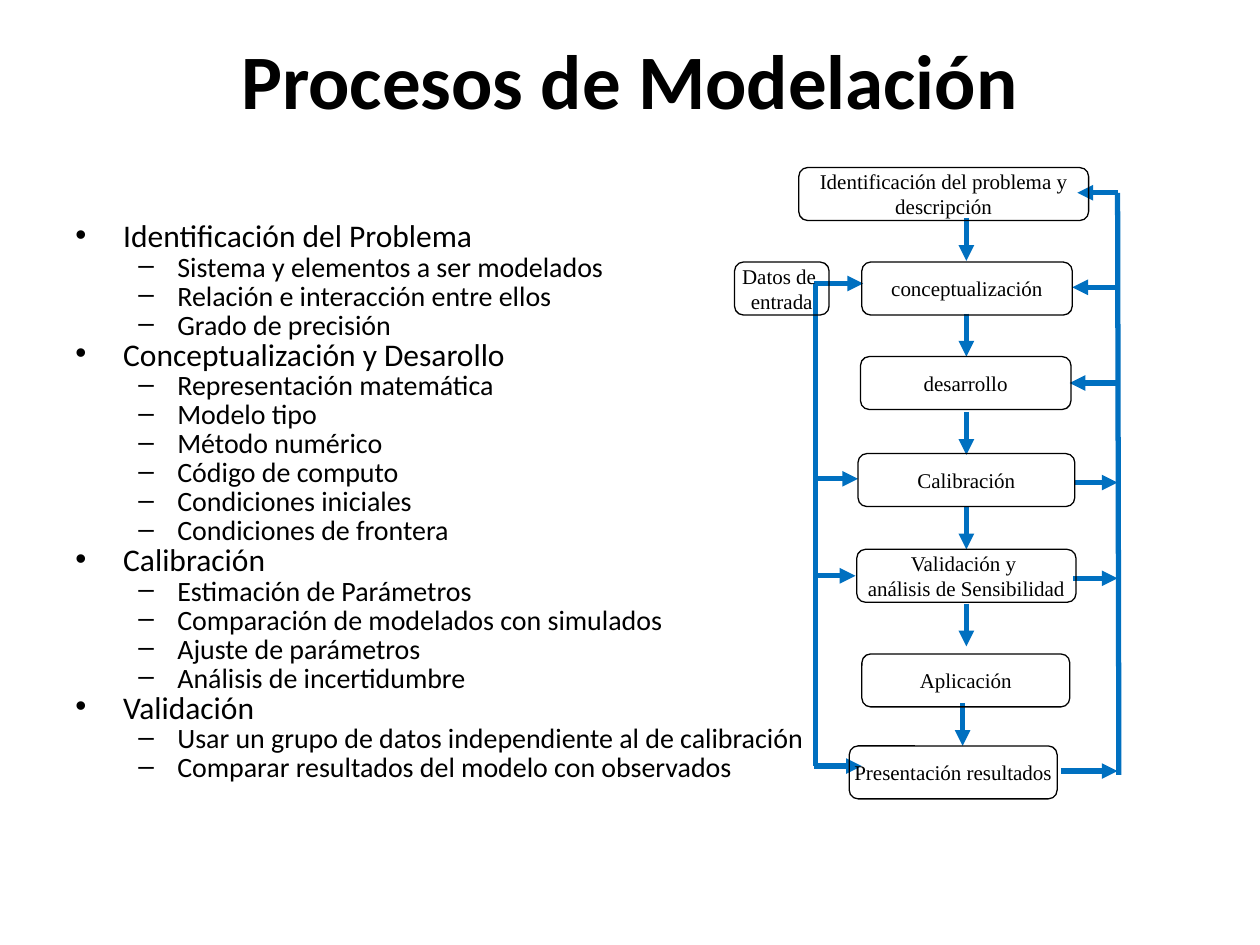
import pptx
import pptx.util
import pptx.dml.color
import pptx.enum.shapes
import pptx.enum.text
import pptx.oxml.ns
from lxml import etree

Inch = pptx.util.Inches
Pt = pptx.util.Pt
RGB = pptx.dml.color.RGBColor
Align = pptx.enum.text.PP_ALIGN
Anchor = pptx.enum.text.MSO_ANCHOR
qn = pptx.oxml.ns.qn

BLACK = RGB(0x00, 0x00, 0x00)
BLUE = RGB(0x00, 0x70, 0xC0)
SANS, SERIF = "Calibri", "Times New Roman"
WIDE, HIGH = 10, 7.5

TITLE = "Procesos de Modelación"
TOPICS = [
    ("Identificación del Problema", [
        "Sistema y elementos a ser modelados",
        "Relación e interacción entre ellos",
        "Grado de precisión"]),
    ("Conceptualización y Desarollo", [
        "Representación matemática",
        "Modelo tipo",
        "Método numérico",
        "Código de computo",
        "Condiciones iniciales",
        "Condiciones de frontera"]),
    ("Calibración", [
        "Estimación de Parámetros",
        "Comparación de modelados con simulados",
        "Ajuste de parámetros",
        "Análisis de incertidumbre"]),
    ("Validación", [
        "Usar un grupo de datos independiente al de calibración",
        "Comparar resultados del modelo con observados"]),
]
# bullet, text size, left margin, hanging indent
LEVELS = [("•", 18, 0.38, 0.38), ("–", 16, 0.81, 0.31)]

# left, top, width, lines of text
BOX_H = 0.42
BOXES = [
    (6.34, 1.33, 2.30, ["Identificación del problema y", " descripción "]),
    (5.83, 2.08, 0.75, ["Datos de ", "entrada"]),
    (6.84, 2.08, 1.67, ["conceptualización"]),
    (6.83, 2.83, 1.67, ["desarrollo"]),
    (6.81, 3.60, 1.72, ["Calibración"]),
    (6.80, 4.36, 1.74, ["Validación y ", "análisis de Sensibilidad"]),
    (6.84, 5.19, 1.65, ["Aplicación"]),
    (6.74, 5.92, 1.65, ["Presentación resultados"]),
]

FLOW, DROP = 7.67, 0.34
DOWN = [(FLOW, 1.73), (FLOW, 2.49), (FLOW, 3.27), (FLOW, 4.02),
        (FLOW, 4.79), (7.64, 5.58)]
FEED, BACK = 6.47, 8.87
INPUT = [(2.25, 6.85), (3.80, 6.81), (4.57, 6.79), (6.08, 6.84)]  # y, tip
RETURN = [(1.53, 8.55), (2.28, 8.51), (3.04, 8.49)]  # y, tip
OUTPUT = [(3.83, 8.53), (4.59, 8.52), (6.12, 8.42)]  # y, start


def write(para, text, size, font, bold=False):
    run = para.add_run()
    run.text = text
    run.font.size = Pt(size)
    run.font.name = font
    run.font.bold = bold
    run.font.color.rgb = BLACK


def text_box(slide, left, top, width, height):
    frame = slide.shapes.add_textbox(
        Inch(left), Inch(top), Inch(width), Inch(height)).text_frame
    frame.word_wrap = True
    return frame


def next_para(frame, index):
    return frame.add_paragraph() if index else frame.paragraphs[0]


def bullet(para, text, level):
    mark, size, left, hang = LEVELS[level]
    para.level = level
    para.line_spacing = 0.7
    para.space_before = Pt(3.1)
    props = para._p.get_or_add_pPr()
    props.set("marL", str(Inch(left)))
    props.set("indent", str(-Inch(hang)))
    etree.SubElement(props, qn("a:buFont")).set("typeface", "Arial")
    etree.SubElement(props, qn("a:buChar")).set("char", mark)
    write(para, text, size, SANS)


def box(slide, left, top, width, lines):
    shape = slide.shapes.add_shape(
        pptx.enum.shapes.MSO_SHAPE.ROUNDED_RECTANGLE,
        Inch(left), Inch(top), Inch(width), Inch(BOX_H))
    shape.shadow.inherit = False
    shape.fill.background()
    shape.line.color.rgb = BLACK
    shape.line.width = Pt(0.75)
    frame = shape.text_frame
    frame.word_wrap = False
    frame.vertical_anchor = Anchor.MIDDLE
    for i, text in enumerate(lines):
        para = next_para(frame, i)
        para.alignment = Align.CENTER
        write(para, text, 12, SERIF)


def line(slide, x1, y1, x2, y2, tip=True):
    link = slide.shapes.add_connector(
        pptx.enum.shapes.MSO_CONNECTOR.STRAIGHT,
        Inch(x1), Inch(y1), Inch(x2), Inch(y2))
    link.line.color.rgb = BLUE
    link.line.width = Pt(3)
    if tip:
        end = etree.SubElement(link.line._get_or_add_ln(), qn("a:tailEnd"))
        end.set("type", "triangle")
    etree.SubElement(link._element.spPr, qn("a:effectLst"))


def main():
    deck = pptx.Presentation()
    deck.slide_width, deck.slide_height = Inch(WIDE), Inch(HIGH)
    slide = deck.slides.add_slide(deck.slide_layouts[6])

    head = text_box(slide, WIDE * 0.05, 0, WIDE * 0.9, HIGH / 6)
    head.vertical_anchor = Anchor.MIDDLE
    head.paragraphs[0].alignment = Align.CENTER
    write(head.paragraphs[0], TITLE, 44, SANS, True)

    body = text_box(slide, WIDE * 0.05, 1.75, WIDE * 0.9, HIGH * 0.66)
    rows = [(text, level) for topic, points in TOPICS
            for text, level in [(topic, 0)] + [(p, 1) for p in points]]
    for i, (text, level) in enumerate(rows):
        bullet(next_para(body, i), text, level)

    for x, y in DOWN:
        line(slide, x, y, x, y + DROP)
    line(slide, FEED, INPUT[0][0], FEED, INPUT[-1][0], False)
    for y, tip in INPUT:
        line(slide, FEED - 0.01, y, tip, y)
    line(slide, BACK, 1.53, BACK + 0.01, 6.15, False)
    for y, tip in RETURN:
        line(slide, BACK, y, tip, y)
    for y, start in OUTPUT:
        line(slide, start, y, BACK, y)
    for spot in BOXES:
        box(slide, *spot)

    deck.save("out.pptx")


if __name__ == "__main__":
    main()
